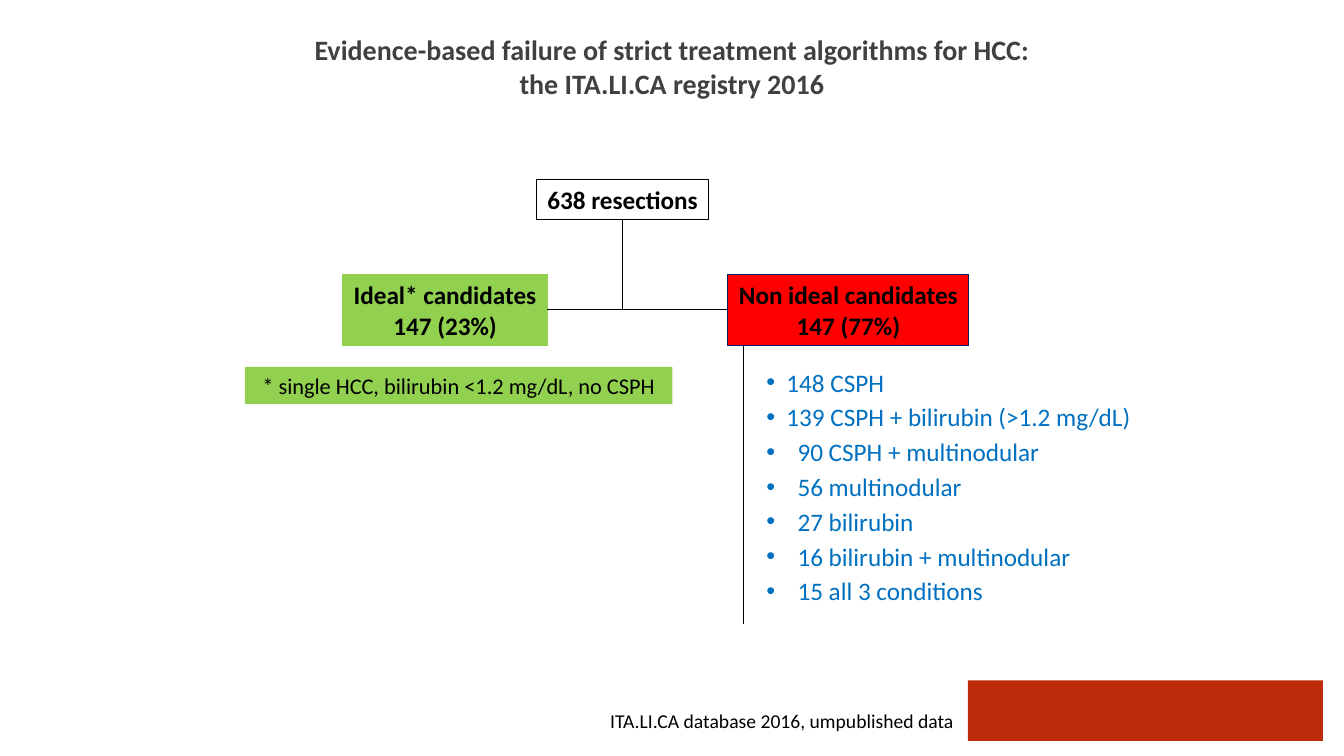
from dataclasses import dataclass
from typing import Optional

import pptx
import pptx.dml.color
import pptx.enum.shapes
import pptx.enum.text
import pptx.oxml.ns
import pptx.util
from lxml import etree

Inches = pptx.util.Inches
Pt = pptx.util.Pt
ALIGN = pptx.enum.text.PP_ALIGN
ANCHOR = pptx.enum.text.MSO_ANCHOR
qn = pptx.oxml.ns.qn

BLACK, BLUE, GREY = "000000", "0070C0", "404040"
GREEN, RED, NAVY, BRICK = "92D050", "FF0000", "002060", "BD2B0B"


@dataclass
class Box:
    at: tuple[float, float, float, float]
    lines: tuple[str, ...] = ()
    size: int = 18
    bold: bool = True
    fill: Optional[str] = None
    line: Optional[str] = None
    align: ALIGN = ALIGN.CENTER


@dataclass
class Reason:
    text: str
    indent: float = 0.31


BAR = Box((9.6, 6.75, 3.52, 0.6), fill=BRICK)
RESECTIONS = Box((5.32, 1.78, 1.71, 0.4), ("638 resections",), line=BLACK)
IDEAL = Box((3.4, 2.72, 2.03, 0.71), ("Ideal* candidates", "147 (23%)"),
            fill=GREEN, line=GREEN)
NON_IDEAL = Box((7.22, 2.72, 2.39, 0.71), ("Non ideal candidates", "147 (77%)"),
                fill=RED, line=NAVY)
CRITERIA = Box((2.43, 3.64, 4.24, 0.37),
               ("* single HCC, bilirubin <1.2 mg/dL, no CSPH",),
               size=16, bold=False, fill=GREEN)
CREDIT = Box((5.92, 6.98, 3.64, 0.34),
             ("ITA.LI.CA database 2016, umpublished data",),
             size=14, bold=False, align=ALIGN.RIGHT)

TITLE = ("Evidence-based failure of strict treatment algorithms for HCC:",
         "the ITA.LI.CA registry 2016")
REASONS = (
    Reason("148 CSPH", 0.2),
    Reason("139 CSPH + bilirubin (>1.2 mg/dL)", 0.2),
    Reason("90 CSPH + multinodular"),
    Reason("56 multinodular"),
    Reason("27 bilirubin"),
    Reason("16 bilirubin + multinodular"),
    Reason("15 all 3 conditions"),
)


def rgb(color: str) -> pptx.dml.color.RGBColor:
    return pptx.dml.color.RGBColor.from_string(color)


def apply(target, formats: dict) -> None:
    for name, value in formats.items():
        setattr(target, name, value)


def place(sp, at: tuple[float, float, float, float]) -> None:
    apply(sp, dict(zip(("left", "top", "width", "height"), map(Inches, at))))


def write(tf, lines: tuple[str, ...], size: int, color: str,
          bold: bool, align: ALIGN) -> None:
    for i, text in enumerate(lines):
        p = tf.paragraphs[0] if i == 0 else tf.add_paragraph()
        p.alignment = align
        r = p.add_run()
        r.text = text
        apply(r.font, {"name": "Calibri", "size": Pt(size), "bold": bold})
        r.font.color.rgb = rgb(color)


def set_frame(tf, wrap: bool, anchor: ANCHOR) -> None:
    apply(tf, {"word_wrap": wrap, "vertical_anchor": anchor,
               "auto_size": pptx.enum.text.MSO_AUTO_SIZE.NONE})


def add_box(s, box: Box):
    sp = s.shapes.add_shape(pptx.enum.shapes.MSO_SHAPE.RECTANGLE,
                            *map(Inches, box.at))
    sp.shadow.inherit = False
    if box.fill:
        sp.fill.solid()
        sp.fill.fore_color.rgb = rgb(box.fill)
    else:
        sp.fill.background()
    if box.line:
        sp.line.color.rgb = rgb(box.line)
        sp.line.width = Pt(0.75)
    else:
        sp.line.fill.background()
    set_frame(sp.text_frame, False, ANCHOR.MIDDLE)
    write(sp.text_frame, box.lines, box.size, BLACK, box.bold, box.align)
    return sp


def add_line(s, x1: float, y1: float, x2: float, y2: float):
    cx = s.shapes.add_connector(pptx.enum.shapes.MSO_CONNECTOR.STRAIGHT,
                                *map(Inches, (x1, y1, x2, y2)))
    cx.line.color.rgb = rgb(BLACK)
    cx.line.width = Pt(0.75)
    etree.SubElement(cx._element.spPr, qn("a:effectLst"))
    return cx


def add_title(s) -> None:
    sp = s.shapes.title
    place(sp, (2.1, 0.27, 9.13, 0.77))
    set_frame(sp.text_frame, True, ANCHOR.MIDDLE)
    write(sp.text_frame, TITLE, 20, GREY, True, ALIGN.CENTER)


def add_reasons(s) -> None:
    sp = s.placeholders[1]
    place(sp, (7.5, 3.59, 3.88, 2.63))
    tf = sp.text_frame
    set_frame(tf, True, ANCHOR.TOP)
    write(tf, tuple(reason.text for reason in REASONS), 18, BLUE, False, ALIGN.LEFT)
    for i, (p, reason) in enumerate(zip(tf.paragraphs, REASONS)):
        p.space_before = Pt(3.25 if i else 0)
        pPr = p._p.get_or_add_pPr()
        pPr.set("marL", str(Inches(reason.indent)))
        pPr.set("indent", str(-Inches(reason.indent)))
        etree.SubElement(pPr, qn("a:buFont"), typeface="Arial")
        etree.SubElement(pPr, qn("a:buChar"), char="•")


def add_tree(s) -> None:
    root, ideal, non_ideal = (add_box(s, b) for b in (RESECTIONS, IDEAL, NON_IDEAL))
    trunk = add_line(s, 6.18, 2.18, 6.18, 3.08)
    trunk.begin_connect(root, 2)
    trunk.end_x = trunk.begin_x
    branch = add_line(s, 5.43, 3.08, 7.22, 3.08)
    branch.begin_connect(ideal, 3)
    branch.end_connect(non_ideal, 1)
    add_line(s, 7.37, 3.43, 7.37, 6.19)


def main() -> None:
    prs = pptx.Presentation()
    prs.slide_width, prs.slide_height = Inches(13.33), Inches(7.5)
    s = prs.slides.add_slide(prs.slide_layouts[1])
    add_title(s)
    add_reasons(s)
    add_tree(s)
    for box in (BAR, CRITERIA, CREDIT):
        add_box(s, box)
    prs.save("out.pptx")


if __name__ == "__main__":
    main()
